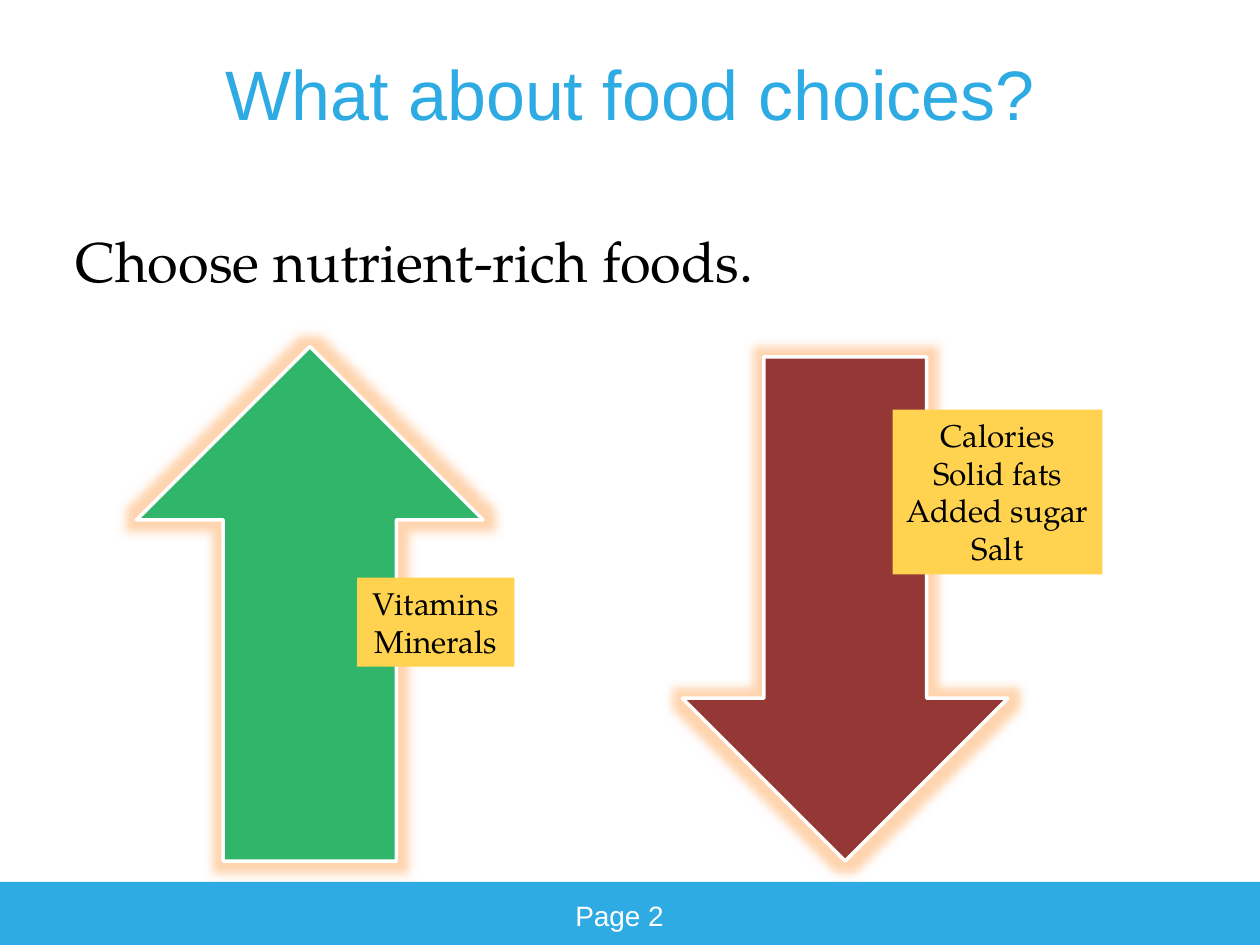
from lxml.etree import SubElement
from pptx import Presentation
from pptx.dml.color import RGBColor
from pptx.enum.shapes import MSO_SHAPE
from pptx.enum.text import MSO_ANCHOR, MSO_AUTO_SIZE, PP_ALIGN
from pptx.oxml.ns import qn
from pptx.util import Emu, Pt

PX = 7620  # EMU per px, 120 px to the inch


def color(hex_text):
    return RGBColor.from_string(hex_text)


def write(frame, text, font="TeX Gyre Pagella", size=18, ink="000000",
          align=PP_ALIGN.CENTER, anchor=MSO_ANCHOR.TOP, hanging=0):
    """Fill a text frame, one paragraph per line of text."""
    frame.word_wrap = True
    frame.vertical_anchor = anchor
    frame.text = text
    for paragraph in frame.paragraphs:
        paragraph.alignment = align
        paragraph.space_before = Pt(0)
        properties = paragraph._p.get_or_add_pPr()
        properties.set("marL", str(hanging * PX))
        properties.set("indent", str(-hanging * PX))
        SubElement(properties, qn("a:buNone"))
        paragraph.font.name = font
        paragraph.font.size = Pt(size)
        paragraph.font.color.rgb = color(ink)


class SlideBuilder:
    BLUE, GREEN, RED = "2EABE3", "31B56A", "953735"
    YELLOW, WHITE, GLOW = "FFD24F", "FFFFFF", "FF9639"
    HEADING_FONT = "Arial"

    def __init__(self, deck):
        self.slide = deck.slides.add_slide(deck.slide_layouts[1])

    def placeholder(self, index, box, text, **style):
        holder = self.slide.placeholders[index]
        holder.left, holder.top, holder.width, holder.height = (
            Emu(n * PX) for n in box)
        write(holder.text_frame, text, **style)
        holder.text_frame.auto_size = MSO_AUTO_SIZE.NONE

    def block(self, box, fill, kind=MSO_SHAPE.RECTANGLE):
        block = self.slide.shapes.add_shape(kind, *(Emu(n * PX) for n in box))
        block.shadow.inherit = False
        block.fill.solid()
        block.fill.fore_color.rgb = color(fill)
        block.line.fill.background()
        return block

    def arrow(self, box, fill, rotation=0):
        arrow = self.block(box, fill, MSO_SHAPE.DOWN_ARROW)
        arrow.rotation = rotation
        arrow.line.color.rgb = color(self.WHITE)
        arrow.line.width = Pt(2)
        # Soft orange glow
        effects = arrow._element.spPr.find(qn("a:effectLst"))
        glow = SubElement(effects, qn("a:glow"), rad=str(Pt(11)))
        tint = SubElement(glow, qn("a:srgbClr"), val=self.GLOW)
        SubElement(tint, qn("a:alpha"), val="40000")

    def label(self, box, text):
        write(self.block(box, self.YELLOW).text_frame, text)

    def caption(self, box, text, **style):
        caption = self.slide.shapes.add_textbox(*(Emu(n * PX) for n in box))
        write(caption.text_frame, text, **style)


def main():
    deck = Presentation()
    deck.slide_width, deck.slide_height = Emu(1200 * PX), Emu(900 * PX)
    page = SlideBuilder(deck)

    # Footer band
    page.block((0, 840, 1200, 60), page.BLUE)

    # Title and message
    page.placeholder(0, (60, 36, 1080, 104), "What about food choices?",
                     font=page.HEADING_FONT, size=40, ink=page.BLUE,
                     anchor=MSO_ANCHOR.MIDDLE)
    page.placeholder(1, (60, 210, 1080, 594), "Choose nutrient-rich foods.",
                     size=32, align=PP_ALIGN.LEFT, hanging=45)

    # Less of these, more of those
    page.arrow((650, 340, 310, 480), page.RED)
    page.arrow((130, 330, 330, 490), page.GREEN, rotation=180)
    page.label((340, 550, 150, 85), "Vitamins\nMinerals")
    page.label((850, 390, 200, 157), "Calories\nSolid fats\nAdded sugar\nSalt")

    # Page number
    page.caption((450, 850, 280, 44), "Page 2",
                 font=page.HEADING_FONT, size=16, ink=page.WHITE)

    deck.save("out.pptx")


if __name__ == "__main__":
    main()
